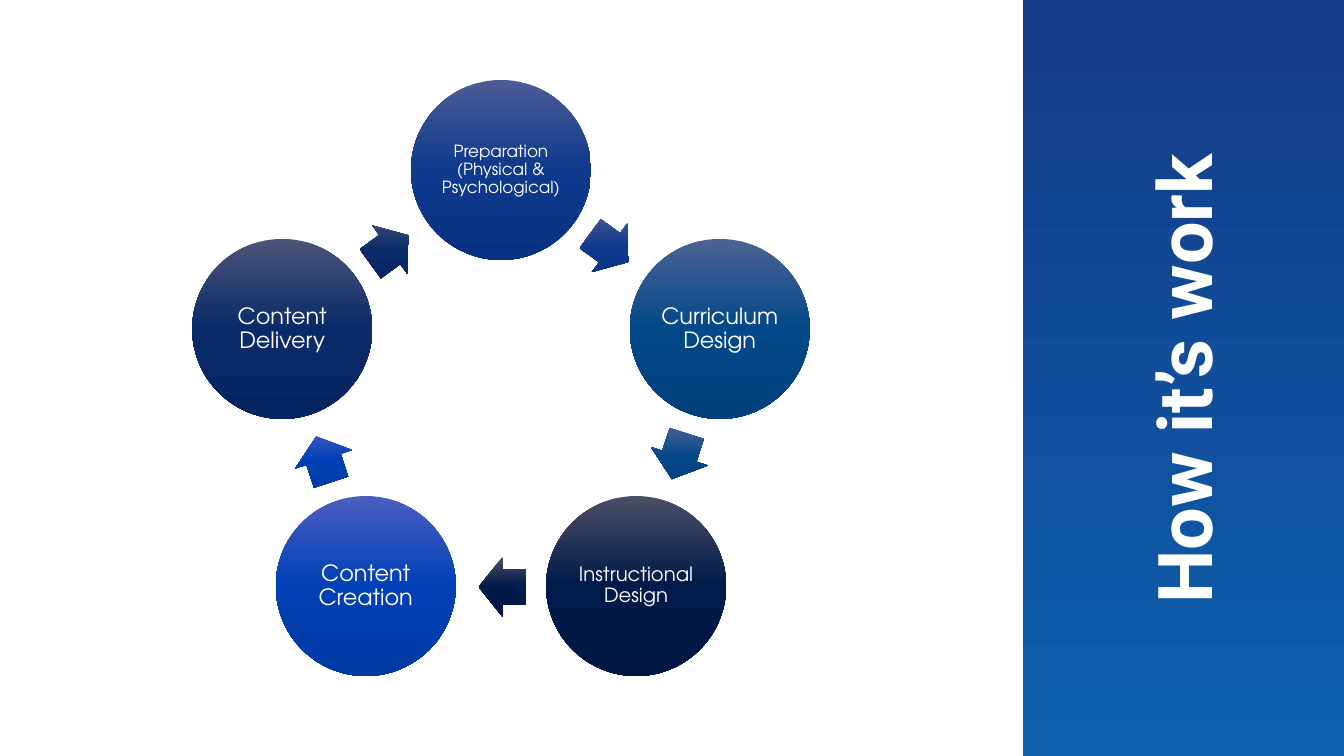
from math import cos, radians, sin

from lxml import etree
from pptx import Presentation
from pptx.dml.color import RGBColor
from pptx.enum.shapes import MSO_SHAPE as SHAPE
from pptx.enum.text import MSO_ANCHOR as ANCHOR, MSO_AUTO_SIZE as AUTO_SIZE, PP_ALIGN as ALIGN
from pptx.oxml.ns import qn
from pptx.util import Pt

PX = 914400 / 100.8

CENTRE_X, CENTRE_Y = 501, 400
RING, ARROW_RING = 230, 187
CIRCLE = 180
ARROW_W, ARROW_H = 48, 60

STEPS = [
    ("Preparation (Physical & Psychological)", 12, ["4C5B95", "0E398C", "083181"]),
    ("Curriculum Design", 16, ["4B6392", "034888", "00407C"]),
    ("Instructional Design", 14, ["4B4E64", "001A49", "001741"]),
    ("Content Creation", 16, ["4B5EBF", "0040B6", "0039A2"]),
    ("Content Delivery", 16, ["4C5478", "0A2B68", "052561"]),
]


def add_gradient_shape(kind, x, y, width, height, colours):
    """Add an unlined shape whose evenly spaced colours run from top to bottom."""
    shape = slide.shapes.add_shape(kind, *(round(v * PX) for v in (x, y, width, height)))
    shape.shadow.inherit = False
    shape.line.fill.background()
    shape.fill.gradient()
    shape.fill.gradient_angle = 270
    gradient = shape._element.spPr.find(qn("a:gradFill"))
    gradient.set("rotWithShape", "0")
    stops = gradient.find(qn("a:gsLst"))
    for stop in list(stops):
        stops.remove(stop)
    for i, colour in enumerate(colours):
        stop = etree.SubElement(stops, qn("a:gs"), pos=str(100000 * i // (len(colours) - 1)))
        etree.SubElement(stop, qn("a:srgbClr"), val=colour)
    return shape


def write(shape, text, font_format, frame_format):
    frame = shape.text_frame
    for name, value in frame_format.items():
        setattr(frame, name, value)
    paragraph = frame.paragraphs[0]
    paragraph.alignment = ALIGN.CENTER
    run = paragraph.add_run()
    run.text = text
    for name, value in font_format.items():
        setattr(run.font, name, value)
    run.font.color.rgb = RGBColor.from_string("FFFFFF")
    return paragraph


prs = Presentation()
prs.slide_width, prs.slide_height = round(1344 * PX), round(756 * PX)
slide = prs.slides.add_slide(prs.slide_layouts[5])

add_gradient_shape(SHAPE.RECTANGLE, 1023, 0, 321, 756, ["143B86", "0D60AE"])

margins = ("margin_left", "margin_top", "margin_right", "margin_bottom")
circle_frame = dict.fromkeys(margins, round(2 * PX))
circle_frame.update(word_wrap=True, vertical_anchor=ANCHOR.MIDDLE)

for i, (label, size, colours) in enumerate(STEPS):
    angle = radians(72 * i)
    circle = add_gradient_shape(
        SHAPE.OVAL,
        CENTRE_X + RING * sin(angle) - CIRCLE / 2,
        CENTRE_Y - RING * cos(angle) - CIRCLE / 2,
        CIRCLE, CIRCLE, colours)
    paragraph = write(circle, label, {"name": "TeX Gyre Adventor", "size": Pt(size)}, circle_frame)
    paragraph.line_spacing = 0.9

    angle = radians(72 * i + 35.5)
    arrow = add_gradient_shape(
        SHAPE.RIGHT_ARROW,
        CENTRE_X + ARROW_RING * sin(angle) - ARROW_W / 2,
        CENTRE_Y - ARROW_RING * cos(angle) - ARROW_H / 2,
        ARROW_W, ARROW_H, colours)
    arrow.adjustments[0] = 0.6
    arrow.adjustments[1] = 0.5
    arrow.rotation = 72 * i + 36

title = slide.shapes.title
title.left, title.top, title.width, title.height = (round(v * PX) for v in (805, 328, 756, 102))
title.rotation = 270
write(title, "How it’s work",
      {"name": "Roboto", "size": Pt(54), "bold": True},
      {"word_wrap": True, "vertical_anchor": ANCHOR.TOP, "auto_size": AUTO_SIZE.NONE})
slide.shapes._spTree.append(title._element)

prs.save("out.pptx")
